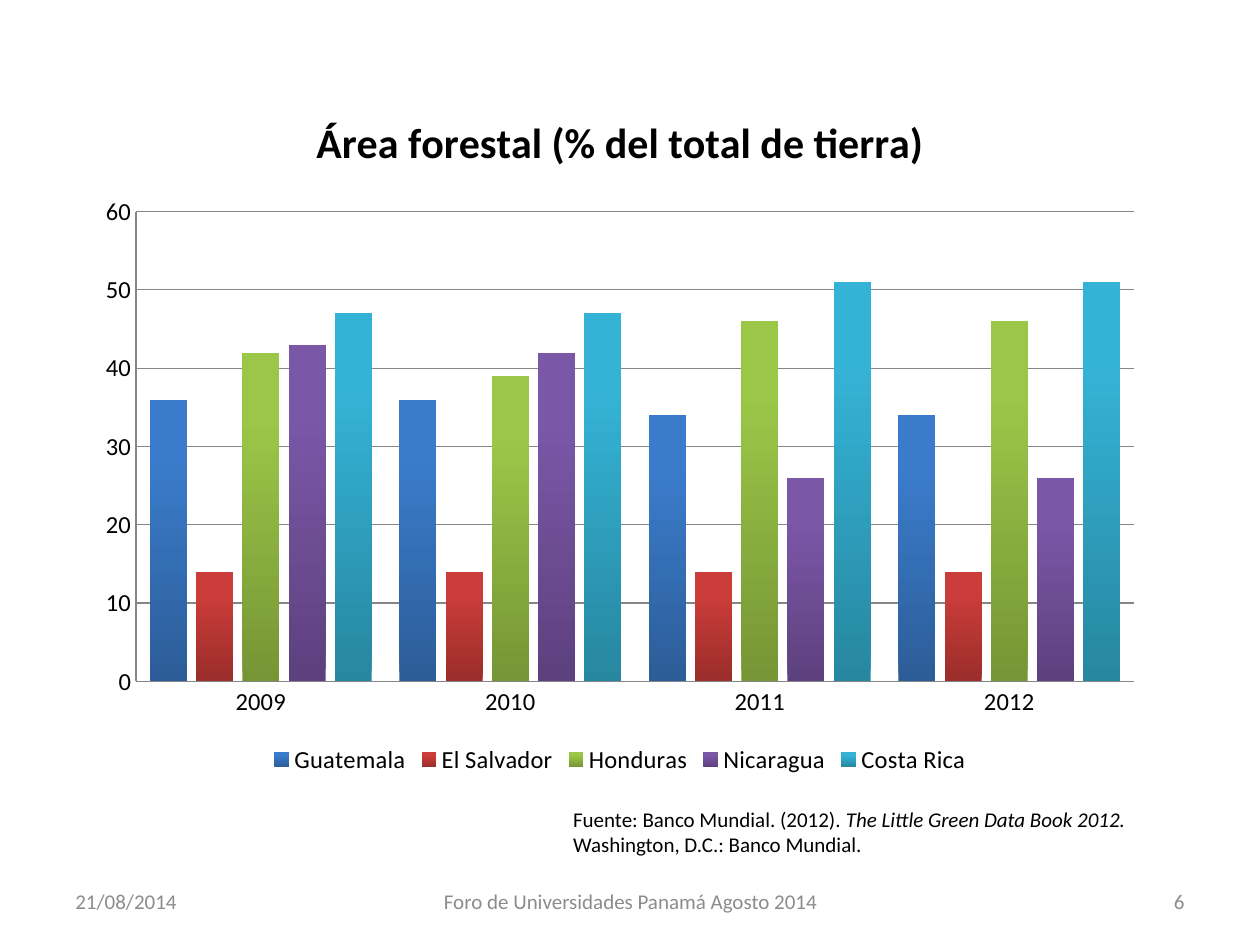
"""Build the slide on forest area in Central America."""
from dataclasses import dataclass

from pptx import Presentation
from pptx.chart.data import CategoryChartData
from pptx.dml.color import RGBColor
from pptx.enum.chart import XL_CHART_TYPE, XL_LEGEND_POSITION, XL_TICK_MARK
from pptx.enum.text import MSO_ANCHOR, PP_ALIGN
from pptx.util import Inches, Pt

COLUMNS = XL_CHART_TYPE.COLUMN_CLUSTERED
LEGEND_BOTTOM = XL_LEGEND_POSITION.BOTTOM
NO_TICK = XL_TICK_MARK.NONE
TOP, MIDDLE = MSO_ANCHOR.TOP, MSO_ANCHOR.MIDDLE
LEFT, CENTER, RIGHT = PP_ALIGN.LEFT, PP_ALIGN.CENTER, PP_ALIGN.RIGHT


@dataclass(frozen=True)
class Theme:
    font: str = "Calibri"
    ink: str = "000000"
    muted: str = "8C8C8C"
    grid: str = "868686"
    title_size: int = 24
    chart_size: int = 14
    note_size: int = 12
    bars: tuple = (
        ("2C5D98", "3A7CCB"),
        ("9B2D2A", "CB3D3A"),
        ("769535", "9BC748"),
        ("5D417E", "7B57A8"),
        ("2787A0", "34B3D6"),
    )


YEARS = ("2009", "2010", "2011", "2012")
FOREST_SHARE = {
    "Guatemala": (36, 36, 34, 34),
    "El Salvador": (14, 14, 14, 14),
    "Honduras": (42, 39, 46, 46),
    "Nicaragua": (43, 42, 26, 26),
    "Costa Rica": (47, 47, 51, 51),
}
SOURCE = (
    ("Fuente: Banco Mundial. (2012). ", False),
    ("The Little Green Data Book 2012. ", True),
    ("Washington, D.C.: Banco Mundial.", False),
)
FOOTER = (
    ("21/08/2014", 0.5, 2.33, LEFT),
    ("Foro de Universidades Panamá Agosto 2014", 3.42, 3.17, CENTER),
    ("6", 7.17, 2.33, RIGHT),
)


class SlideBuilder:
    def __init__(self, slide, theme):
        self.slide = slide
        self.theme = theme

    def style(self, font, size, color, bold=False, italic=False):
        font.name = self.theme.font
        font.size = Pt(size)
        font.bold = bold
        font.italic = italic
        font.color.rgb = RGBColor.from_string(color)

    def text(self, box, pieces, color, align=LEFT, anchor=TOP):
        frame = self.slide.shapes.add_textbox(*map(Inches, box)).text_frame
        frame.word_wrap = True
        frame.vertical_anchor = anchor
        paragraph = frame.paragraphs[0]
        paragraph.alignment = align
        for wording, italic in pieces:
            run = paragraph.add_run()
            run.text = wording
            self.style(run.font, self.theme.note_size, color, italic=italic)

    def rule(self, line):
        line.color.rgb = RGBColor.from_string(self.theme.grid)
        line.width = Pt(0.75)

    def bar_fill(self, fill, colors):
        fill.gradient()
        fill.gradient_angle = 90
        for stop, color, position in zip(fill.gradient_stops, colors, (0, 0.8)):
            stop.color.rgb = RGBColor.from_string(color)
            stop.position = position

    def column_chart(self, box, title, categories, data, maximum, step):
        theme = self.theme
        chart_data = CategoryChartData()
        chart_data.categories = categories
        for name, values in data.items():
            chart_data.add_series(name, values)
        frame = self.slide.shapes.add_chart(COLUMNS, *map(Inches, box), chart_data)
        chart = frame.chart
        self.style(chart.font, theme.chart_size, theme.ink)

        chart.has_title = True
        heading = chart.chart_title.text_frame
        heading.text = title
        self.style(heading.paragraphs[0].runs[0].font, theme.title_size, theme.ink, bold=True)
        chart.chart_title.include_in_layout = False

        chart.has_legend = True
        chart.legend.position = LEGEND_BOTTOM
        chart.legend.include_in_layout = False

        for axis in (chart.category_axis, chart.value_axis):
            axis.major_tick_mark = NO_TICK
            axis.minor_tick_mark = NO_TICK
            self.rule(axis.format.line)
        scale = chart.value_axis
        scale.minimum_scale = 0
        scale.maximum_scale = maximum
        scale.major_unit = step
        scale.has_major_gridlines = True
        self.rule(scale.major_gridlines.format.line)

        plot = chart.plots[0]
        plot.gap_width = 75
        plot.overlap = -25
        plot.vary_by_categories = False
        for series, colors in zip(plot.series, theme.bars):
            self.bar_fill(series.format.fill, colors)


def main():
    presentation = Presentation()
    presentation.slide_width = Inches(10)
    presentation.slide_height = Inches(7.5)
    theme = Theme()
    slide = presentation.slides.add_slide(presentation.slide_layouts[6])
    builder = SlideBuilder(slide, theme)

    builder.column_chart(
        (0.67, 0.68, 8.5, 5.51), "Área forestal (% del total de tierra)",
        YEARS, FOREST_SHARE, maximum=60, step=10,
    )
    builder.text((4.45, 6.35, 4.72, 0.5), SOURCE, theme.ink)
    for wording, left, width, align in FOOTER:
        builder.text((left, 6.95, width, 0.4), [(wording, False)], theme.muted, align, MIDDLE)
    presentation.save("out.pptx")


if __name__ == "__main__":
    main()
